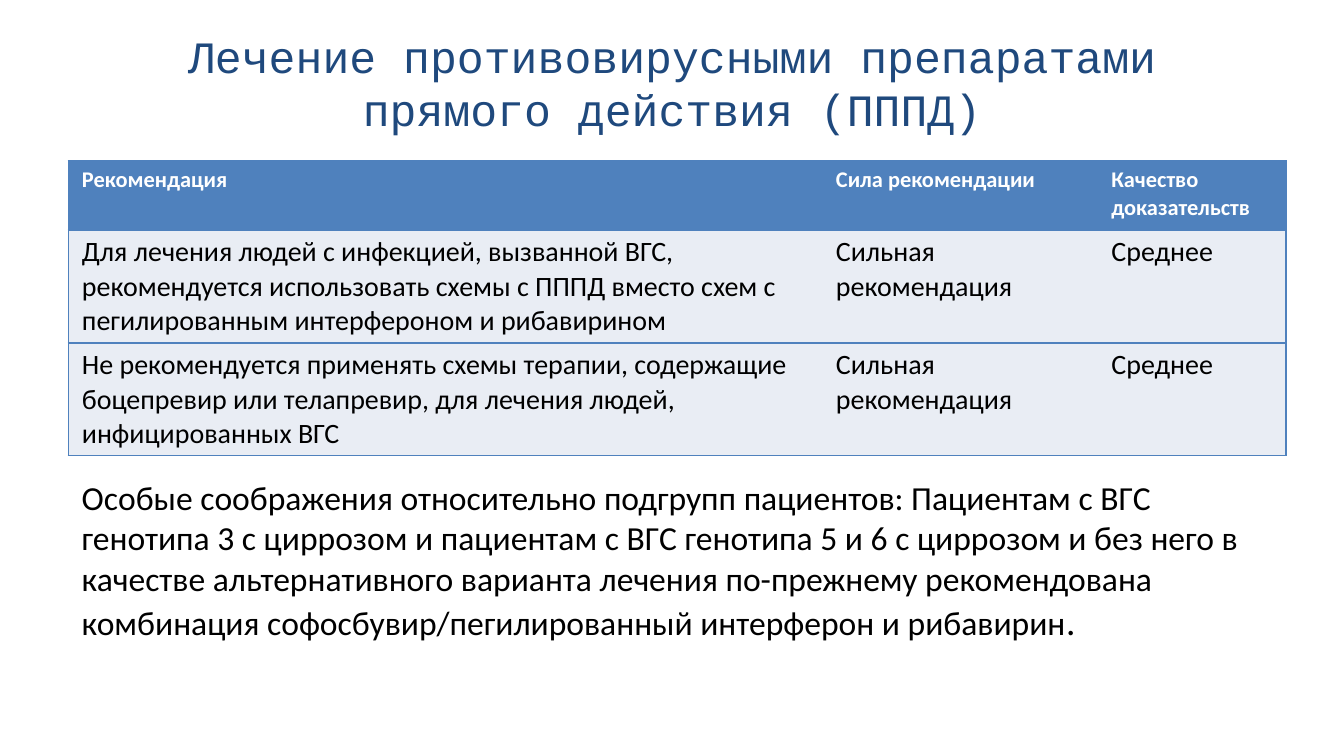
from dataclasses import dataclass

from lxml import etree
from pptx import Presentation
from pptx.dml.color import RGBColor
from pptx.enum.text import MSO_ANCHOR, PP_ALIGN
from pptx.oxml.ns import qn
from pptx.util import Inches, Pt

CENTER = PP_ALIGN.CENTER
LEFT = PP_ALIGN.LEFT
MIDDLE = MSO_ANCHOR.MIDDLE
TOP = MSO_ANCHOR.TOP


@dataclass(frozen=True)
class Theme:
    title_font: str = "Courier New"
    body_font: str = "Calibri"
    title_color: str = "1F497D"
    accent: str = "4F81BD"
    row_fill: str = "E9EDF4"
    header_text: str = "FFFFFF"
    text: str = "000000"
    title_size: int = 24
    note_size: int = 18
    stop_size: int = 20
    header_size: int = 12
    cell_size: int = 15
    border_width: int = 1


THEME = Theme()
SLIDE_WIDTH = 10
SLIDE_HEIGHT = SLIDE_WIDTH * 9 / 16
CONTENT_LEFT = 0.51
COLUMN_WIDTHS = (5.61, 2.05, 1.4)
ROW_HEIGHTS = (0.51, 0.79, 0.75)
CONTENT_WIDTH = sum(COLUMN_WIDTHS)

TITLE = "Лечение противовирусными препаратами прямого действия (ПППД)"
RECOMMENDATIONS = (
    ("Рекомендация", "Сила рекомендации", "Качество доказательств"),
    ("Для лечения людей с инфекцией, вызванной ВГС, рекомендуется использовать "
     "схемы с ПППД вместо схем с пегилированным интерфероном и рибавирином",
     "Сильная рекомендация", "Среднее"),
    ("Не рекомендуется применять схемы терапии, содержащие боцепревир или "
     "телапревир, для лечения людей, инфицированных ВГС",
     "Сильная рекомендация", "Среднее"),
)
SUBGROUP_NOTE = (
    "Особые соображения относительно подгрупп пациентов: Пациентам с ВГC "
    "генотипа 3 с циррозом и пациентам с ВГC генотипа 5 и 6 с циррозом и без "
    "него в качестве альтернативного варианта лечения по-прежнему рекомендована "
    "комбинация софосбувир/пегилированный интерферон и рибавирин"
)


def add_run(paragraph, text, font, size, color, bold=False):
    run = paragraph.add_run()
    run.text = text
    run.font.name = font
    run.font.size = Pt(size)
    run.font.bold = bold
    run.font.color.rgb = RGBColor.from_string(color)


def add_text(slide, box, align, anchor, side_margin=0.1):
    """Add a wrapping text box and return its first paragraph."""
    frame = slide.shapes.add_textbox(*map(Inches, box)).text_frame
    frame.word_wrap = True
    frame.vertical_anchor = anchor
    frame.margin_left = frame.margin_right = Inches(side_margin)
    paragraph = frame.paragraphs[0]
    paragraph.alignment = align
    return paragraph


def set_borders(cell, sides):
    """Draw the named sides; leave the other sides without a line."""
    properties = cell._tc.get_or_add_tcPr()
    for position, side in enumerate("LRTB"):
        line = etree.Element(qn(f"a:ln{side}"), w=str(Pt(THEME.border_width)))
        if side in sides:
            fill = etree.SubElement(line, qn("a:solidFill"))
            etree.SubElement(fill, qn("a:srgbClr"), val=THEME.accent)
        else:
            etree.SubElement(line, qn("a:noFill"))
        properties.insert(position, line)


def fill_cell(cell, text, is_header, sides):
    cell.margin_left = cell.margin_right = Inches(0.1)
    cell.margin_top = Inches(0.04)
    cell.margin_bottom = Inches(0.05)
    cell.fill.solid()
    cell.fill.fore_color.rgb = RGBColor.from_string(
        THEME.accent if is_header else THEME.row_fill)
    add_run(cell.text_frame.paragraphs[0], text, THEME.body_font,
            THEME.header_size if is_header else THEME.cell_size,
            THEME.header_text if is_header else THEME.text, is_header)
    set_borders(cell, sides)


def add_recommendations(slide, top):
    table = slide.shapes.add_table(
        len(ROW_HEIGHTS), len(COLUMN_WIDTHS), Inches(CONTENT_LEFT), Inches(top),
        Inches(CONTENT_WIDTH), Inches(sum(ROW_HEIGHTS))).table
    table.horz_banding = False
    for column, width in zip(table.columns, COLUMN_WIDTHS):
        column.width = Inches(width)
    for row, height in zip(table.rows, ROW_HEIGHTS):
        row.height = Inches(height)
    outer_sides = ("LTB", "TB", "RTB")
    for r, texts in enumerate(RECOMMENDATIONS):
        for c, (text, sides) in enumerate(zip(texts, outer_sides)):
            fill_cell(table.cell(r, c), text, r == 0, sides)


def main():
    presentation = Presentation()
    presentation.slide_width = Inches(SLIDE_WIDTH)
    presentation.slide_height = Inches(SLIDE_HEIGHT)
    slide = presentation.slides.add_slide(presentation.slide_layouts[6])

    title = add_text(slide, (0.05 * SLIDE_WIDTH, 0.14, 0.9 * SLIDE_WIDTH, 0.94),
                     CENTER, MIDDLE, side_margin=0.15)
    add_run(title, TITLE, THEME.title_font, THEME.title_size, THEME.title_color)

    note = add_text(slide, (CONTENT_LEFT, 3.5, CONTENT_WIDTH, 1.36), LEFT, TOP)
    add_run(note, SUBGROUP_NOTE, THEME.body_font, THEME.note_size, THEME.text)
    add_run(note, ".", THEME.body_font, THEME.stop_size, THEME.text)

    add_recommendations(slide, 1.2)
    presentation.save("out.pptx")


if __name__ == "__main__":
    main()
